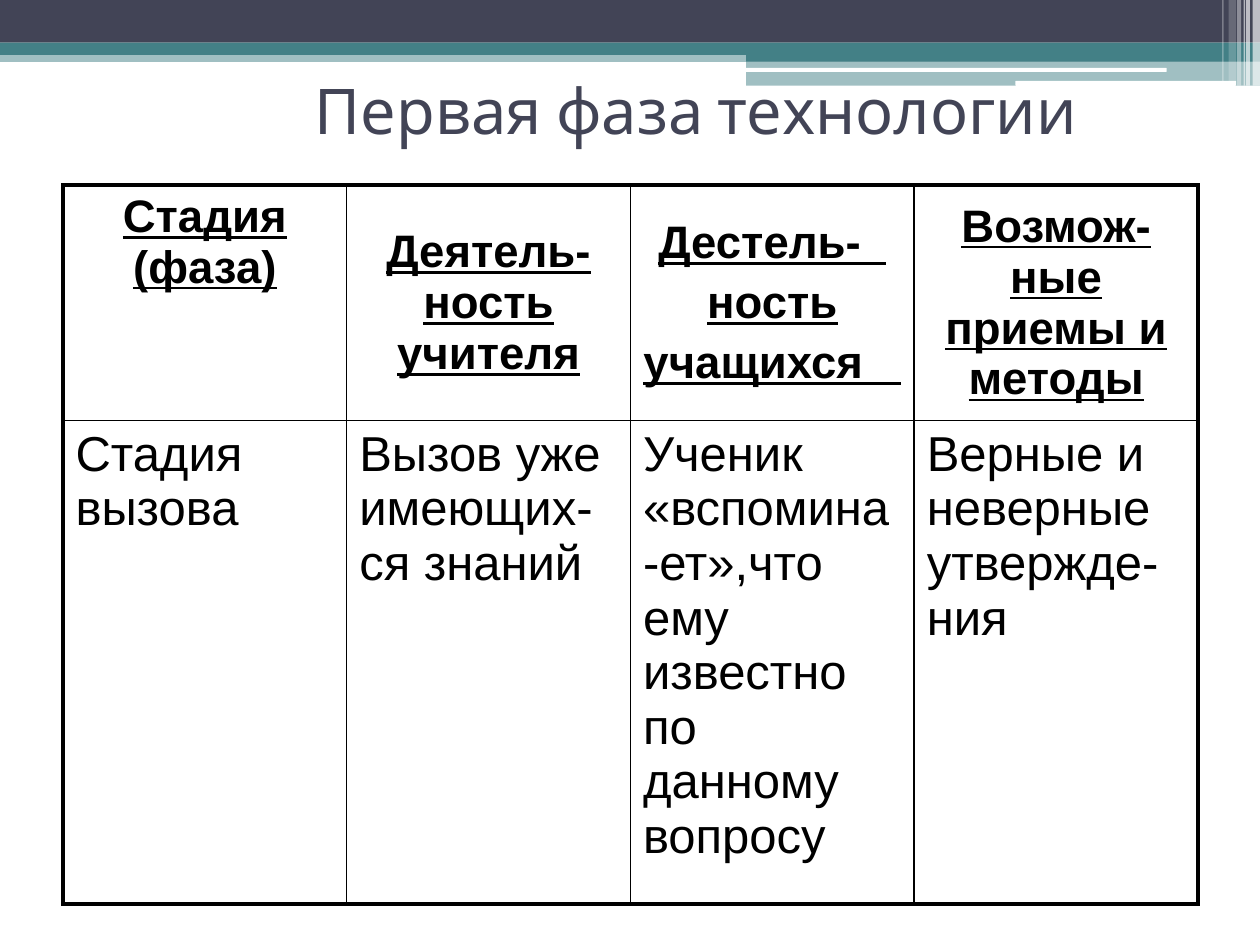
from lxml import etree
from pptx import Presentation
from pptx.dml.color import RGBColor
from pptx.enum.shapes import MSO_SHAPE
from pptx.enum.text import MSO_ANCHOR, PP_ALIGN
from pptx.oxml.ns import qn
from pptx.util import Cm, Pt

RECT, ROUND = MSO_SHAPE.RECTANGLE, MSO_SHAPE.ROUNDED_RECTANGLE
TOP, MIDDLE = MSO_ANCHOR.TOP, MSO_ANCHOR.MIDDLE
LEFT, CENTER = PP_ALIGN.LEFT, PP_ALIGN.CENTER

COLORS = {"dark": "424456", "teal": "438086", "white": "FFFFFF", "black": "000000"}
THIN, THICK = 1, 2.25

# left, top, width, height in cm, colour, opacity in percent
BANDS = [
    (0, 1.02, 25.4, 0.23, "teal", 50),
    (0, 0, 25.4, 0.86, "dark", 100),
    (0, 0.86, 25.4, 0.25, "teal", 100),
    (15.04, 0.99, 10.36, 0.25, "teal", 100),
    (15.04, 1.22, 10.36, 0.51, "teal", 50),
]
LINES = [
    (15.01, 1.37, 8.51, 0.08, "white", 100),
    (20.47, 1.63, 4.45, 0.1, "white", 100),
]
# left, width, height in cm, opacity in percent
STRIPES = [
    (25.25, 0.15, 1.73, 65), (25.12, 0.08, 1.73, 65), (25.07, 0.03, 1.73, 60),
    (24.94, 0.08, 1.73, 40), (24.77, 0.15, 1.63, 20), (24.64, 0.03, 1.63, 30),
]

HEADERS = [
    (["Стадия (фаза)"], TOP),
    (["Деятель-ность учителя"], MIDDLE),
    (["Дестель-  ", "ность", "учащихся   "], MIDDLE),
    (["Возмож-ные приемы и методы"], MIDDLE),
]
BODY = [
    "Стадия вызова",
    "Вызов уже имеющих-ся знаний",
    "Ученик «вспомина-ет»,что ему известно по данному вопросу",
    "Верные и неверные утвержде-ния",
]
COL_WIDTH = 5.72
ROW_HEIGHTS = [4.75, 9.07]


def rgb(name):
    return RGBColor.from_string(COLORS[name])


def add_bar(slide, kind, left, top, width, height, color, opacity):
    sp = slide.shapes.add_shape(kind, Cm(left), Cm(top), Cm(width), Cm(height))
    sp.shadow.inherit = False
    sp.line.fill.background()
    sp.fill.solid()
    sp.fill.fore_color.rgb = rgb(color)
    if opacity < 100:
        clr = sp.fill._xPr.find(".//" + qn("a:srgbClr"))
        etree.SubElement(clr, qn("a:alpha"), val=str(opacity * 1000))
    return sp


def add_header_decor(slide):
    for band in BANDS:
        add_bar(slide, RECT, *band)
    for line in LINES:
        add_bar(slide, ROUND, *line)
    for left, width, height, opacity in STRIPES:
        add_bar(slide, RECT, left, 0, width, height, "white", opacity)


def add_run(p, text, font, size, color, bold=False, underline=False):
    r = p.add_run()
    r.text = text
    r.font.name = font
    r.font.size = Pt(size)
    r.font.color.rgb = rgb(color)
    r.font.bold = bold
    r.font.underline = underline


def add_title(slide, text):
    box = slide.shapes.add_textbox(Cm(6.1), Cm(0.91), Cm(16.03), Cm(2.57))
    tf = box.text_frame
    tf.word_wrap = True
    tf.vertical_anchor = MIDDLE
    add_run(tf.paragraphs[0], text, "Cabin", 36, "dark")


def set_borders(cell, widths):
    """Draw the left, right, top and bottom borders, widths in points."""
    tc_pr = cell._tc.get_or_add_tcPr()
    for i, (side, width) in enumerate(zip("LRTB", widths)):
        ln = etree.Element(qn("a:ln" + side), w=str(Pt(width)))
        fill = etree.SubElement(ln, qn("a:solidFill"))
        etree.SubElement(fill, qn("a:srgbClr"), val=COLORS["black"])
        tc_pr.insert(i, ln)


def fill_cell(cell, lines, anchor, align, size, strong):
    cell.fill.background()
    cell.vertical_anchor = anchor
    tf = cell.text_frame
    for i, line in enumerate(lines):
        p = tf.add_paragraph() if i else tf.paragraphs[0]
        p.alignment = align
        if i:
            p.space_before = Pt(size * 0.2)
        add_run(p, line, "Arial", size, "black", strong, strong)


def add_phase_table(slide):
    n_rows, n_cols = len(ROW_HEIGHTS), len(HEADERS)
    frame = slide.shapes.add_table(n_rows, n_cols, Cm(1.27), Cm(3.73),
                                   Cm(COL_WIDTH * n_cols), Cm(sum(ROW_HEIGHTS)))
    table = frame.table
    table.first_row = table.horz_banding = False
    for col in table.columns:
        col.width = Cm(COL_WIDTH)
    for row, height in zip(table.rows, ROW_HEIGHTS):
        row.height = Cm(height)
    for c, ((lines, anchor), text) in enumerate(zip(HEADERS, BODY)):
        fill_cell(table.cell(0, c), lines, anchor, CENTER, 26, True)
        fill_cell(table.cell(1, c), [text], TOP, LEFT, 28, False)
        for r in range(n_rows):
            outer = (c == 0, c == n_cols - 1, r == 0, r == n_rows - 1)
            set_borders(table.cell(r, c), [THICK if edge else THIN for edge in outer])


def main():
    prs = Presentation()
    prs.slide_width, prs.slide_height = Cm(25.4), Cm(19.05)
    slide = prs.slides.add_slide(prs.slide_layouts[6])
    add_header_decor(slide)
    add_title(slide, "Первая фаза технологии")
    add_phase_table(slide)
    prs.save("out.pptx")


if __name__ == "__main__":
    main()
